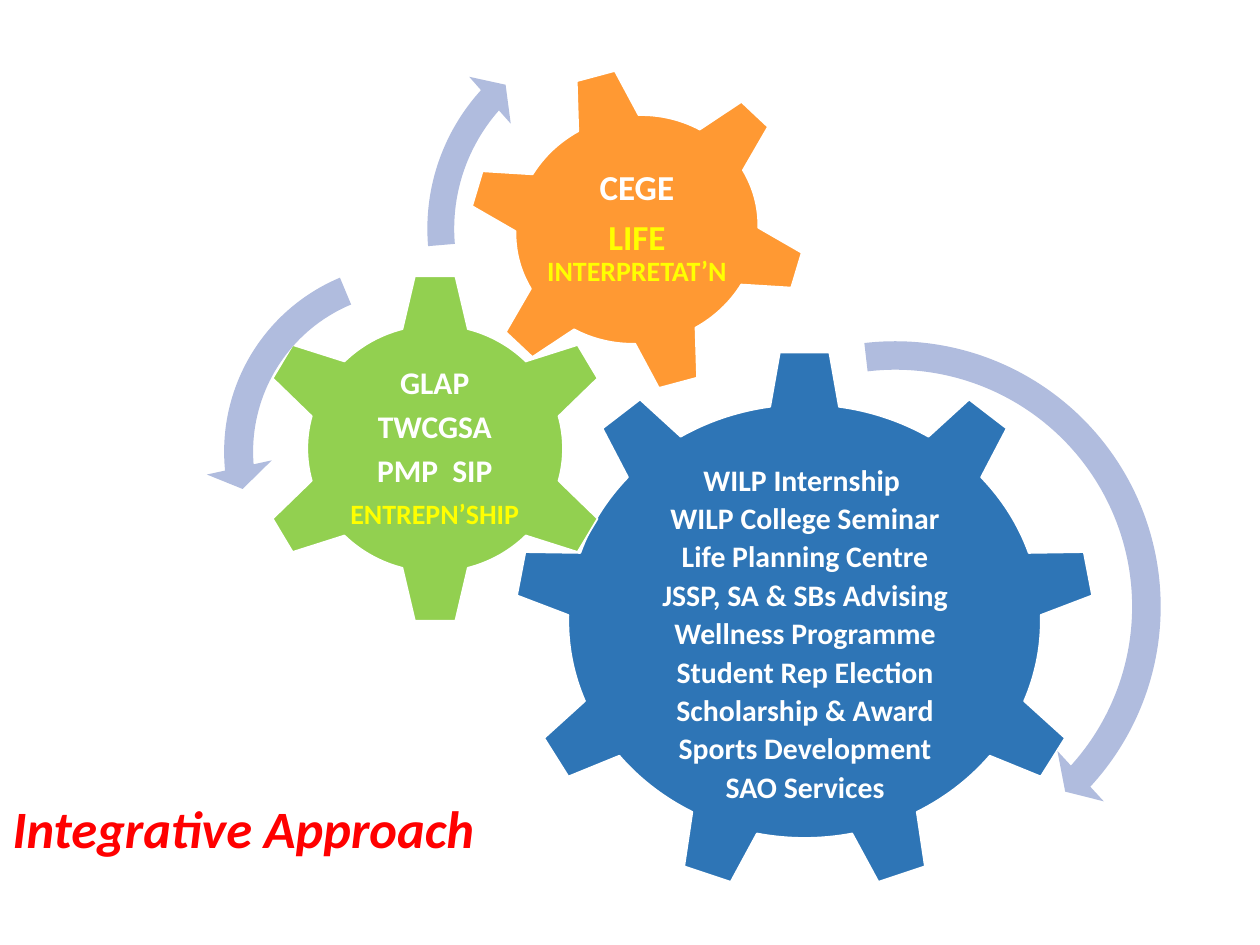
from pptx import Presentation
from pptx.dml.color import RGBColor as Rgb
from pptx.enum.shapes import MSO_SHAPE as Kind
from pptx.enum.text import MSO_ANCHOR as Anchor, MSO_AUTO_SIZE as Fit, PP_ALIGN as Align
from pptx.util import Pt

FONT = "Calibri"
HEX = {
    "blue": "2E75B6", "green": "92D050", "orange": "FF9933", "arrow": "B0BCDE",
    "white": "FFFFFF", "yellow": "FFFF00", "red": "FF0000",
}
TITLE = "Integrative Approach"

# Each line is a list of runs: text, size, colour
SERVICES = [[(text, 17, "white")] for text in (
    "WILP Internship ", "WILP College Seminar", "Life Planning Centre",
    "JSSP, SA & SBs Advising", "Wellness Programme", "Student Rep Election",
    "Scholarship & Award", "Sports Development", "SAO Services",
)]
PROGRAMS = [[(text, 18, "white")] for text in ("GLAP", "TWCGSA", "PMP  SIP")]
PROGRAMS.append([("ENTREPN’SHIP", 16, "yellow")])
LIFE = [
    [("CEGE", 20, "white")],
    [("LIFE ", 20, "yellow"), ("INTERPRETAT’N", 16, "yellow")],
]

GEARS = [
    {"kind": Kind.GEAR_9, "box": (293.8, 200.2, 331.9, 309.6), "turn": 0, "fill": "blue",
     "area": (359.3, 284, 201.6, 159), "inset": 1.4, "pitch": 0.8, "lines": SERVICES},
    {"kind": Kind.GEAR_6, "box": (145.4, 155.5, 206.6, 201.6), "turn": 0, "fill": "green",
     "area": (196.6, 206.6, 103.7, 99.4), "inset": 2, "pitch": 0.9, "lines": PROGRAMS},
    {"kind": Kind.GEAR_6, "box": (266.4, 38.2, 195.1, 185.8), "turn": 345, "fill": "orange",
     "area": (309.6, 78.5, 108.7, 105.1), "inset": 2, "pitch": 0.9, "lines": LIFE},
]
# Kind, left, top, side, adjustments
ARROWS = [
    (Kind.CIRCULAR_ARROW, 348.5, 183.6, 326.2, (0.05, 2.99, 25.46, 157.99, 0.06)),
    (Kind.LEFT_CIRCULAR_ARROW, 117.4, 139.7, 236.9, (0.07, 4.3, 104.89, 148.38, 0.08)),
    (Kind.CIRCULAR_ARROW, 234, 2.9, 255.6, (0.06, 3.94, 133.14, 105.08, 0.07)),
]


def shade(name):
    return Rgb.from_string(HEX[name])


def style(run, size, color):
    font = run.font
    font.name, font.size, font.bold = FONT, Pt(size), True
    font.color.rgb = shade(color)


def draw(slide, kind, box, fill):
    shape = slide.shapes.add_shape(kind, *map(Pt, box))
    shape.shadow.inherit = False
    shape.fill.solid()
    shape.fill.fore_color.rgb = shade(fill)
    return shape


def label(slide, gear):
    frame = slide.shapes.add_textbox(*map(Pt, gear["area"])).text_frame
    frame.word_wrap = True
    frame.vertical_anchor = Anchor.MIDDLE
    inset = Pt(gear["inset"])
    frame.margin_left = frame.margin_right = inset
    frame.margin_top = frame.margin_bottom = inset
    for i, line in enumerate(gear["lines"]):
        para = frame.add_paragraph() if i else frame.paragraphs[0]
        para.alignment = Align.CENTER
        para.line_spacing = gear["pitch"]
        para.space_after = Pt(round(line[0][1] * 0.33, 1))
        for text, size, color in line:
            run = para.add_run()
            run.text = text
            style(run, size, color)


def head(slide):
    title = slide.shapes.title
    title.left, title.top, title.width, title.height = map(Pt, (0, 446.4, 291.6, 57.6))
    frame = title.text_frame
    frame.text = TITLE
    frame.auto_size = Fit.NONE
    frame.vertical_anchor = Anchor.MIDDLE
    para = frame.paragraphs[0]
    para.alignment = Align.LEFT
    para.line_spacing = 0.9
    style(para.runs[0], 30, "red")
    para.runs[0].font.italic = True


def main():
    deck = Presentation()
    deck.slide_width, deck.slide_height = Pt(720), Pt(540)
    slide = deck.slides.add_slide(deck.slide_layouts[5])
    for gear in GEARS:
        shape = draw(slide, gear["kind"], gear["box"], gear["fill"])
        shape.rotation = gear["turn"]
        shape.line.color.rgb = shade("white")
        shape.line.width = Pt(1)
        label(slide, gear)
    for kind, left, top, side, values in ARROWS:
        arrow = draw(slide, kind, (left, top, side, side), "arrow")
        arrow.line.fill.background()
        for i, value in enumerate(values):
            arrow.adjustments[i] = value
    head(slide)
    deck.save("out.pptx")


if __name__ == "__main__":
    main()
